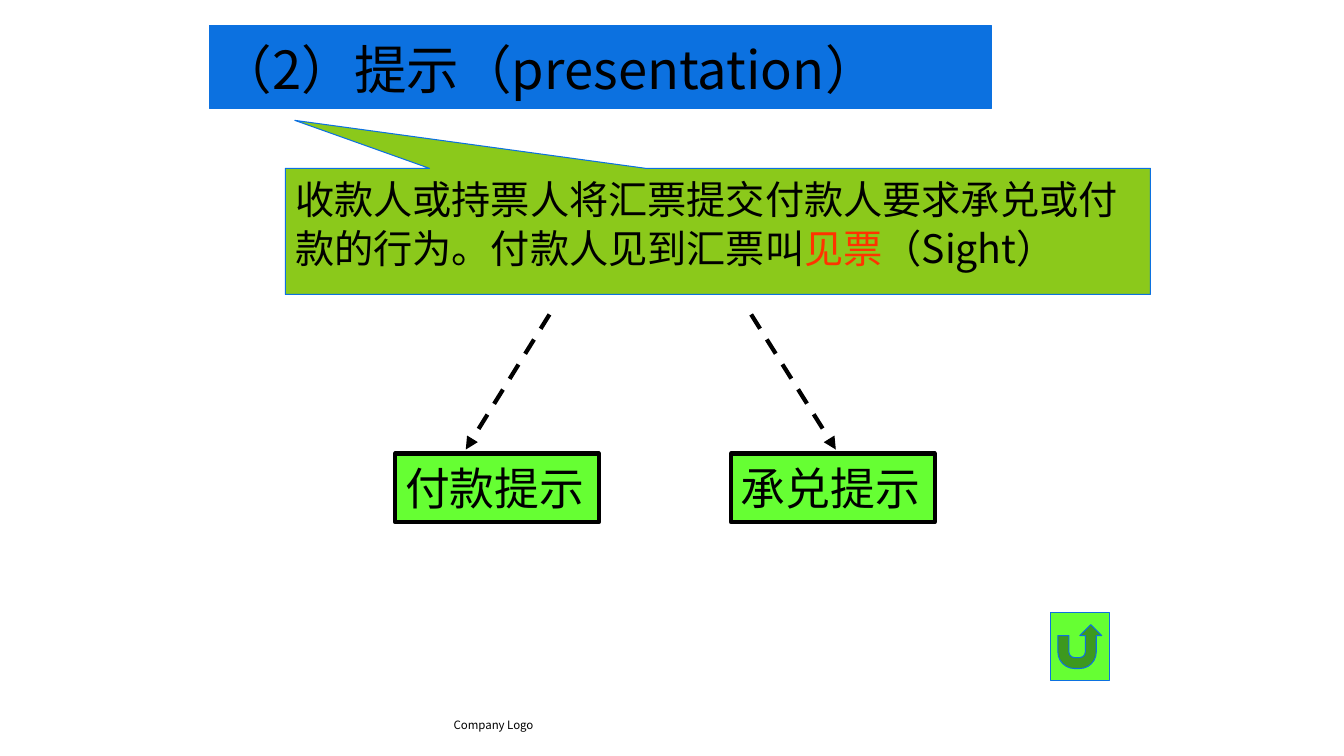
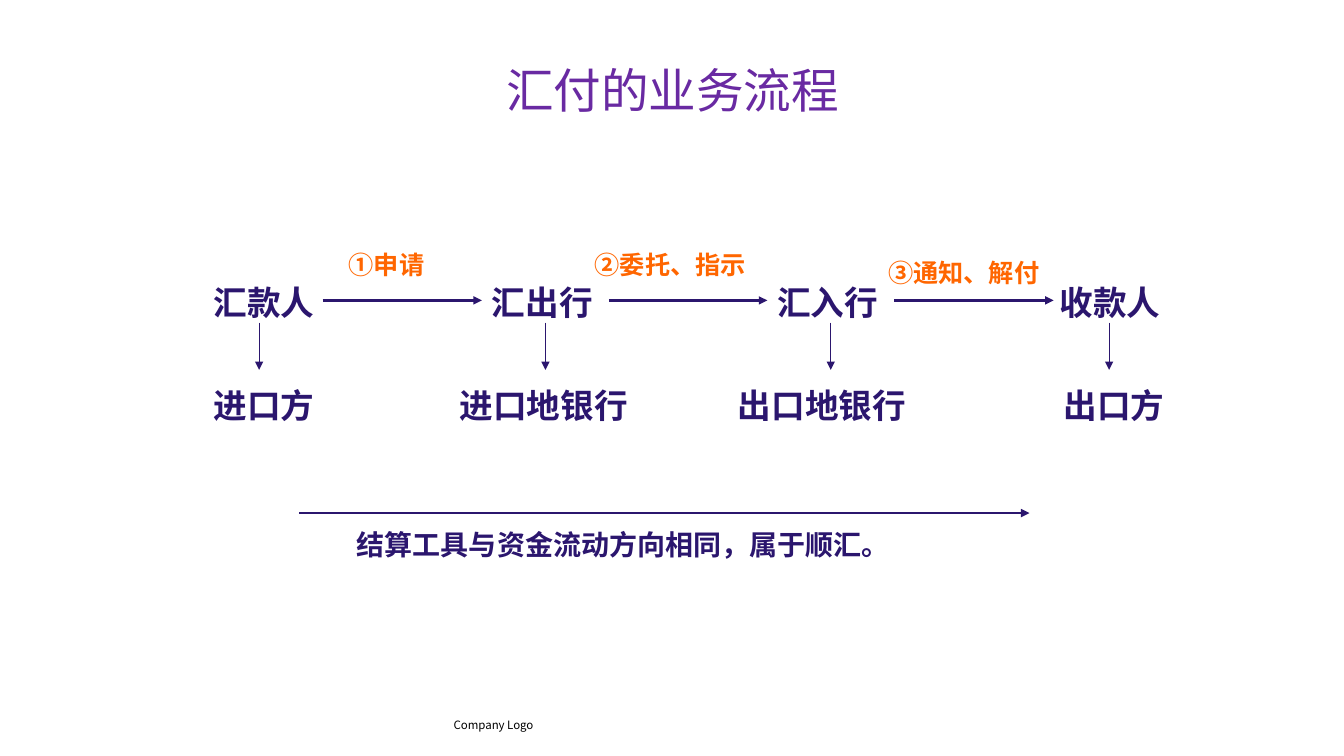
from dataclasses import dataclass

from lxml import etree
from pptx import Presentation
from pptx.dml.color import RGBColor
from pptx.enum.dml import MSO_LINE
from pptx.enum.shapes import MSO_CONNECTOR, MSO_SHAPE
from pptx.enum.text import MSO_ANCHOR, MSO_AUTO_SIZE, PP_ALIGN
from pptx.oxml.ns import qn
from pptx.util import Inches, Pt

RECT = MSO_SHAPE.RECTANGLE
CALLOUT = MSO_SHAPE.RECTANGULAR_CALLOUT
RETURN = MSO_SHAPE.ACTION_BUTTON_RETURN
STRAIGHT = MSO_CONNECTOR.STRAIGHT
DASH = MSO_LINE.DASH
TOP, MIDDLE, BOTTOM = MSO_ANCHOR.TOP, MSO_ANCHOR.MIDDLE, MSO_ANCHOR.BOTTOM
LEFT, CENTER = PP_ALIGN.LEFT, PP_ALIGN.CENTER
NO_FIT = MSO_AUTO_SIZE.NONE
LEFT_SIDE, RIGHT_SIDE = 1, 3
TITLE_ONLY = 5


@dataclass(frozen=True)
class Theme:
    black: str = "000000"
    blue: str = "0C71E0"
    green: str = "66FF33"
    olive: str = "8BC91B"
    red: str = "FF3300"
    purple: str = "692AA2"
    navy: str = "2B166E"
    orange: str = "FF6600"
    cjk: str = "Noto Sans CJK SC"
    latin: str = "Arial"
    banner: float = 37.5
    heading: float = 34
    box: float = 32
    body: float = 28
    node: float = 24
    note: float = 20
    step: float = 18
    footer: float = 8.2
    leading: float = 1.25


T = Theme()


@dataclass(frozen=True)
class Box:
    x: float
    y: float
    w: float
    h: float

    def emu(self) -> tuple:
        return tuple(Inches(v) for v in (self.x, self.y, self.w, self.h))


@dataclass(frozen=True)
class Style:
    size: float
    color: str
    font: str = T.cjk
    bold: bool = False
    align: PP_ALIGN = LEFT
    anchor: MSO_ANCHOR = TOP
    wrap: bool = True


@dataclass(frozen=True)
class Party:
    role: str
    x: float
    arrow_x: float
    identity: str
    identity_box: Box


@dataclass(frozen=True)
class Step:
    label: str
    box: Box
    start: float
    end: float


BANNER = Style(T.banner, T.black, anchor=MIDDLE)
HEADING = Style(T.heading, T.purple, align=CENTER)
FOOTER = Style(T.footer, T.black, anchor=BOTTOM)
BODY = Style(T.body, T.black)
BOX_LABEL = Style(T.box, T.black, wrap=False)
NODE = Style(T.node, T.navy, T.latin, True)
NOTE = Style(T.note, T.navy, T.latin, True)
STEP = Style(T.step, T.orange, T.latin, True)

NODE_Y, NODE_W, NODE_H = 2.73, 1.26, 0.5
IDENTITY_Y = 3.75
FLOW_Y = NODE_Y + NODE_H / 2

PARTIES = (
    Party("汇款人", 2.02, 2.57, "进口方", Box(2.02, IDENTITY_Y, 1.26, NODE_H)),
    Party("汇出行", 4.78, 5.41, "进口地银行", Box(4.46, IDENTITY_Y, 1.89, NODE_H)),
    Party("汇入行", 7.61, 8.24, "出口地银行", Box(7.22, IDENTITY_Y, 1.89, NODE_H)),
    Party("收款人", 10.41, 11, "出口方", Box(10.45, IDENTITY_Y, 1.22, NODE_H)),
)
STEPS = (
    Step("①申请", Box(3.36, 2.41, 1.26, 0.4), 3.2, 4.78),
    Step("②委托、指示", Box(5.8, 2.41, 1.81, 0.4), 6.04, 7.61),
    Step("③通知、解付", Box(8.71, 2.49, 1.81, 0.4), 8.87, 10.45),
)


def rgb(color: str) -> RGBColor:
    return RGBColor.from_string(color)


def write(sp, style: Style, *runs: tuple[str, str]) -> None:
    tf = sp.text_frame
    tf.auto_size = NO_FIT
    tf.word_wrap = style.wrap
    tf.vertical_anchor = style.anchor
    p = tf.paragraphs[0]
    p.alignment = style.align
    p.line_spacing = Pt(style.size * T.leading)
    for text, color in runs:
        r = p.add_run()
        r.text = text
        r.font.size = Pt(style.size)
        r.font.bold = style.bold
        r.font.color.rgb = rgb(color)
        r.font.name = style.font
        ea = etree.SubElement(r.font._element, qn("a:ea"))
        ea.set("typeface", T.cjk)


def add_text(s, box: Box, text: str, style: Style):
    sp = s.shapes.add_textbox(*box.emu())
    write(sp, style, (text, style.color))
    return sp


def paint(sp, fill: str, line: str, width: float) -> None:
    sp.fill.solid()
    sp.fill.fore_color.rgb = rgb(fill)
    sp.line.color.rgb = rgb(line)
    sp.line.width = Pt(width)


def add_shape(s, kind: MSO_SHAPE, box: Box, fill: str, line: str = T.blue, width: float = 0.75):
    sp = s.shapes.add_shape(kind, *box.emu())
    sp.shadow.inherit = False
    paint(sp, fill, line, width)
    return sp


def add_arrow(s, x1: float, y1: float, x2: float, y2: float, color: str, width: float):
    cx = s.shapes.add_connector(STRAIGHT, *(Inches(v) for v in (x1, y1, x2, y2)))
    cx.line.color.rgb = rgb(color)
    cx.line.width = Pt(width)
    ln = cx.line._get_or_add_ln()
    etree.SubElement(ln, qn("a:tailEnd")).set("type", "triangle")
    etree.SubElement(cx._element.spPr, qn("a:effectLst"))
    return cx


def add_slide(prs, title: str, box: Box, style: Style):
    s = prs.slides.add_slide(prs.slide_layouts[TITLE_ONLY])
    sp = s.shapes.title
    sp.left, sp.top, sp.width, sp.height = box.emu()
    write(sp, style, (title, style.color))
    footer = add_text(s, Box(4.5, 6.91, 4.33, 0.35), "Company Logo", FOOTER)
    tf = footer.text_frame
    tf.margin_left = tf.margin_top = tf.margin_right = tf.margin_bottom = 0
    return s


def build_presentment(prs) -> None:
    s = add_slide(prs, "（2）提示（presentation）", Box(2.08, 0.25, 7.75, 0.83), BANNER)
    paint(s.shapes.title, T.blue, T.blue, 0.75)
    add_shape(s, RETURN, Box(10.42, 6.08, 0.58, 0.67), T.green)

    callout = add_shape(s, CALLOUT, Box(2.83, 1.67, 8.58, 1.25), T.olive)
    callout.adjustments[0] = -0.489
    callout.adjustments[1] = -0.881
    write(
        callout, BODY,
        ("收款人或持票人将汇票提交付款人要求承兑或付款的行为。付款人见到汇票叫", T.black),
        ("见票", T.red),
        ("（Sight）", T.black),
    )

    for label, x, start, end in (("付款提示", 3.92, 5.45, 4.62), ("承兑提示", 7.25, 7.45, 8.29)):
        cx = add_arrow(s, start, 3.12, end, 4.46, T.black, 3)
        cx.line.dash_style = DASH
        sp = add_shape(s, RECT, Box(x, 4.5, 2.02, 0.68), T.green, T.black, 3)
        write(sp, BOX_LABEL, (label, T.black))


def build_remittance(prs) -> None:
    s = add_slide(prs, "汇付的业务流程", Box(2.17, 0.53, 9, 0.8), HEADING)

    nodes = []
    for party in PARTIES:
        nodes.append(add_text(s, Box(party.x, NODE_Y, NODE_W, NODE_H), party.role, NODE))
        add_text(s, party.identity_box, party.identity, NODE)
        add_arrow(s, party.arrow_x, 3.2, party.arrow_x, 3.67, T.navy, 0.75)

    for i, step in enumerate(STEPS):
        cx = add_arrow(s, step.start, FLOW_Y, step.end, FLOW_Y, T.navy, 2)
        if i > 0:
            cx.begin_connect(nodes[i], RIGHT_SIDE)
        if i < len(STEPS) - 1:
            cx.end_connect(nodes[i + 1], LEFT_SIDE)
        add_text(s, step.box, step.label, STEP)

    add_arrow(s, 2.97, 5.09, 10.21, 5.09, T.navy, 2)
    add_text(s, Box(3.44, 5.17, 6.38, 0.43), "结算工具与资金流动方向相同，属于顺汇。", NOTE)


def main() -> None:
    prs = Presentation()
    prs.slide_width, prs.slide_height = Inches(13.33), Inches(7.5)
    build_presentment(prs)
    build_remittance(prs)
    prs.save("out.pptx")


if __name__ == "__main__":
    main()
